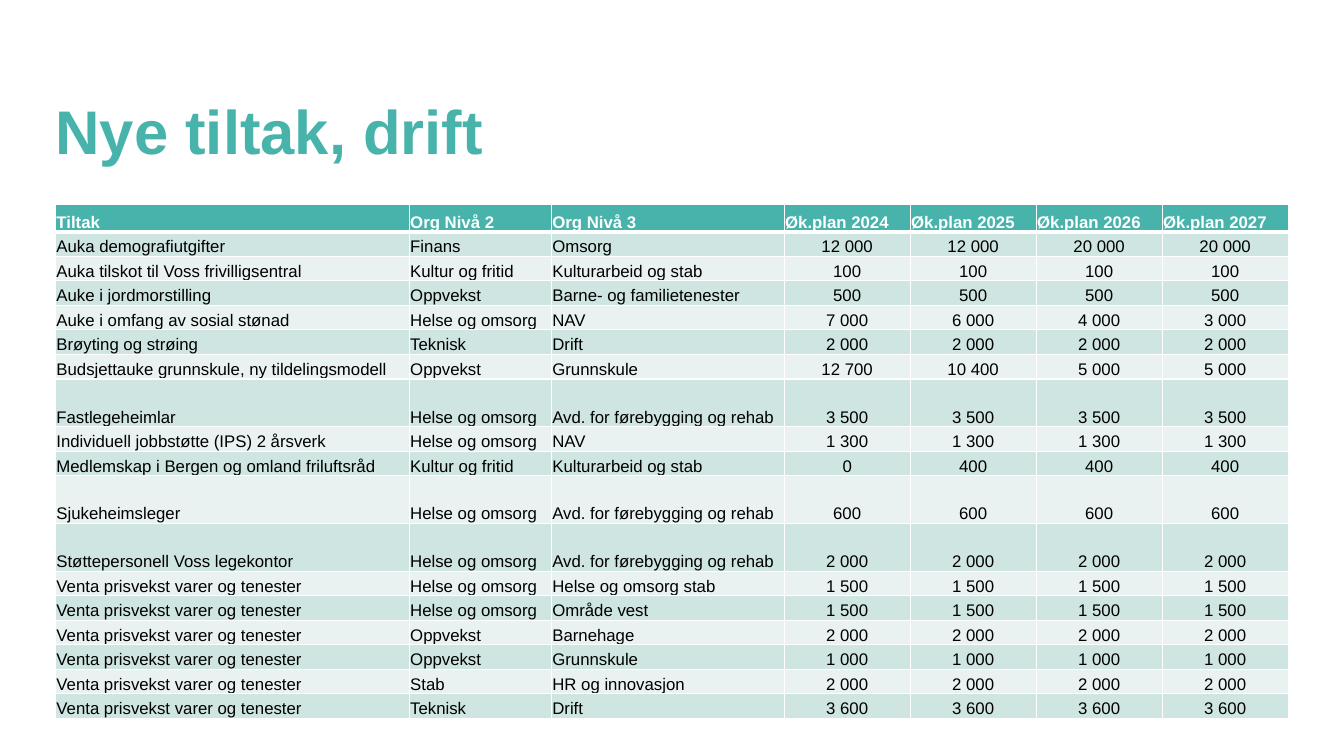
"""Build the slide that lists new operating measures for 2024 to 2027."""
from typing import Any, NamedTuple

from lxml.etree import SubElement
from pptx import Presentation
from pptx.dml.color import RGBColor
from pptx.enum.text import MSO_ANCHOR, PP_ALIGN
from pptx.oxml.ns import qn
from pptx.slide import Slide
from pptx.table import _Cell
from pptx.util import Emu, Pt

EMU_PER_PX = 3048
TEAL = RGBColor(0x48, 0xB3, 0xAB)
DARK_BAND = RGBColor(0xCF, 0xE5, 0xE2)
LIGHT_BAND = RGBColor(0xE9, 0xF2, 0xF1)
WHITE = RGBColor(0xFF, 0xFF, 0xFF)
BLACK = RGBColor(0x00, 0x00, 0x00)

LEFT, WIDTH = 165, 3669
TITLE_TOP, TITLE_HEIGHT = 252, 246
TABLE_TOP = 609
COLUMN_WIDTHS = (1053, 423, 693) + (375,) * 4
HEADER_HEIGHT, ROW_HEIGHT, TALL_ROW_HEIGHT = 81, 73, 142
CELL_MARGIN = 3
THIN, THICK = 1, 3

TITLE_FONT = {"name": "Arial", "size": Pt(44), "bold": True}
HEADER_FONT = {"name": "Arial", "size": Pt(12), "bold": True}
BODY_FONT = {"name": "Arial", "size": Pt(12), "bold": False}

CARE = "Helse og omsorg"
REHAB = "Avd. for førebygging og rehab"
PRICE_GROWTH = "Venta prisvekst varer og tenester"
YEARS = (2024, 2025, 2026, 2027)
HEADINGS = ("Tiltak", "Org Nivå 2", "Org Nivå 3") + tuple(f"Øk.plan {year}" for year in YEARS)


class Measure(NamedTuple):
    """A measure, its two organisation levels and its amount per year."""
    name: str
    level_2: str
    level_3: str
    amounts: tuple[int, ...]

    def texts(self) -> tuple[str, ...]:
        """Return the cell texts of the measure."""
        amounts = (f"{amount:,}".replace(",", " ") for amount in self.amounts)
        return (self.name, self.level_2, self.level_3, *amounts)

    def height(self) -> int:
        """Return the row height of the measure."""
        return TALL_ROW_HEIGHT if self.level_3 == REHAB else ROW_HEIGHT


class RowStyle(NamedTuple):
    """Colours, font and border widths of a table row."""
    fill: RGBColor
    color: RGBColor
    font: dict[str, Any]
    top: int
    bottom: int


MEASURES = (
    Measure("Auka demografiutgifter", "Finans", "Omsorg", (12000, 12000, 20000, 20000)),
    Measure("Auka tilskot til Voss frivilligsentral", "Kultur og fritid", "Kulturarbeid og stab", (100,) * 4),
    Measure("Auke i jordmorstilling", "Oppvekst", "Barne- og familietenester", (500,) * 4),
    Measure("Auke i omfang av sosial stønad", CARE, "NAV", (7000, 6000, 4000, 3000)),
    Measure("Brøyting og strøing", "Teknisk", "Drift", (2000,) * 4),
    Measure("Budsjettauke grunnskule, ny tildelingsmodell", "Oppvekst", "Grunnskule", (12700, 10400, 5000, 5000)),
    Measure("Fastlegeheimlar", CARE, REHAB, (3500,) * 4),
    Measure("Individuell jobbstøtte (IPS) 2 årsverk", CARE, "NAV", (1300,) * 4),
    Measure("Medlemskap i Bergen og omland friluftsråd", "Kultur og fritid", "Kulturarbeid og stab", (0, 400, 400, 400)),
    Measure("Sjukeheimsleger", CARE, REHAB, (600,) * 4),
    Measure("Støttepersonell Voss legekontor", CARE, REHAB, (2000,) * 4),
    Measure(PRICE_GROWTH, CARE, "Helse og omsorg stab", (1500,) * 4),
    Measure(PRICE_GROWTH, CARE, "Område vest", (1500,) * 4),
    Measure(PRICE_GROWTH, "Oppvekst", "Barnehage", (2000,) * 4),
    Measure(PRICE_GROWTH, "Oppvekst", "Grunnskule", (1000,) * 4),
    Measure(PRICE_GROWTH, "Stab", "HR og innovasjon", (2000,) * 4),
    Measure(PRICE_GROWTH, "Teknisk", "Drift", (3600,) * 4),
)


def px(length: int) -> Emu:
    """Turn a length in px into EMU."""
    return Emu(length * EMU_PER_PX)


def set_values(target: Any, values: dict[str, Any]) -> None:
    """Set every value of the dict as an attribute of the target."""
    for name, value in values.items():
        setattr(target, name, value)


def add_borders(cell: _Cell, style: RowStyle) -> None:
    """Give a cell its white borders."""
    properties = cell._tc.get_or_add_tcPr()
    widths = {"a:lnL": THIN, "a:lnR": THIN, "a:lnT": style.top, "a:lnB": style.bottom}
    for tag, width in widths.items():
        line = SubElement(properties, qn(tag), w=str(Pt(width)))
        fill = SubElement(line, qn("a:solidFill"))
        SubElement(fill, qn("a:srgbClr"), val=str(WHITE))


def fill_cell(cell: _Cell, text: str, alignment: PP_ALIGN, style: RowStyle) -> None:
    """Write and format one table cell."""
    add_borders(cell, style)
    cell.fill.solid()
    cell.fill.fore_color.rgb = style.fill
    margin = px(CELL_MARGIN)
    set_values(cell, {
        "text": text, "vertical_anchor": MSO_ANCHOR.BOTTOM,
        "margin_left": margin, "margin_top": margin, "margin_right": margin, "margin_bottom": 0,
    })
    paragraph = cell.text_frame.paragraphs[0]
    paragraph.alignment = alignment
    font = paragraph.runs[0].font
    set_values(font, style.font)
    font.color.rgb = style.color


def add_title(slide: Slide, text: str) -> None:
    """Place and format the title placeholder."""
    title = slide.shapes.title
    set_values(title, {
        "left": px(LEFT), "top": px(TITLE_TOP), "width": px(WIDTH), "height": px(TITLE_HEIGHT),
    })
    frame = title.text_frame
    set_values(frame, {
        "text": text, "word_wrap": True, "vertical_anchor": MSO_ANCHOR.BOTTOM,
        "margin_left": 0, "margin_top": 0, "margin_right": 0, "margin_bottom": 0,
    })
    paragraph = frame.paragraphs[0]
    set_values(paragraph, {"alignment": PP_ALIGN.LEFT, "line_spacing": 0.9})
    font = paragraph.runs[0].font
    set_values(font, TITLE_FONT)
    font.color.rgb = TEAL


def add_measure_table(slide: Slide, measures: tuple[Measure, ...]) -> None:
    """Draw the table with a heading row and one row per measure."""
    heights = [HEADER_HEIGHT] + [measure.height() for measure in measures]
    rows = [HEADINGS] + [measure.texts() for measure in measures]
    table = slide.shapes.add_table(
        len(rows), len(HEADINGS), px(LEFT), px(TABLE_TOP), px(WIDTH), px(sum(heights))
    ).table
    for column, width in zip(table.columns, COLUMN_WIDTHS):
        column.width = px(width)
    for index, (row, height, texts) in enumerate(zip(table.rows, heights, rows)):
        row.height = px(height)
        if index == 0:
            style = RowStyle(TEAL, WHITE, HEADER_FONT, THIN, THICK)
        else:
            band = DARK_BAND if index % 2 else LIGHT_BAND
            style = RowStyle(band, BLACK, BODY_FONT, THICK if index == 1 else THIN, THIN)
        for position, (cell, text) in enumerate(zip(row.cells, texts)):
            is_amount = index > 0 and position >= len(HEADINGS) - len(YEARS)
            fill_cell(cell, text, PP_ALIGN.CENTER if is_amount else PP_ALIGN.LEFT, style)


def main() -> None:
    """Build and save the presentation."""
    presentation = Presentation()
    set_values(presentation, {"slide_width": px(4000), "slide_height": px(2250)})
    slide = presentation.slides.add_slide(presentation.slide_layouts[5])
    add_title(slide, "Nye tiltak, drift")
    add_measure_table(slide, MEASURES)
    presentation.save("out.pptx")


if __name__ == "__main__":
    main()
